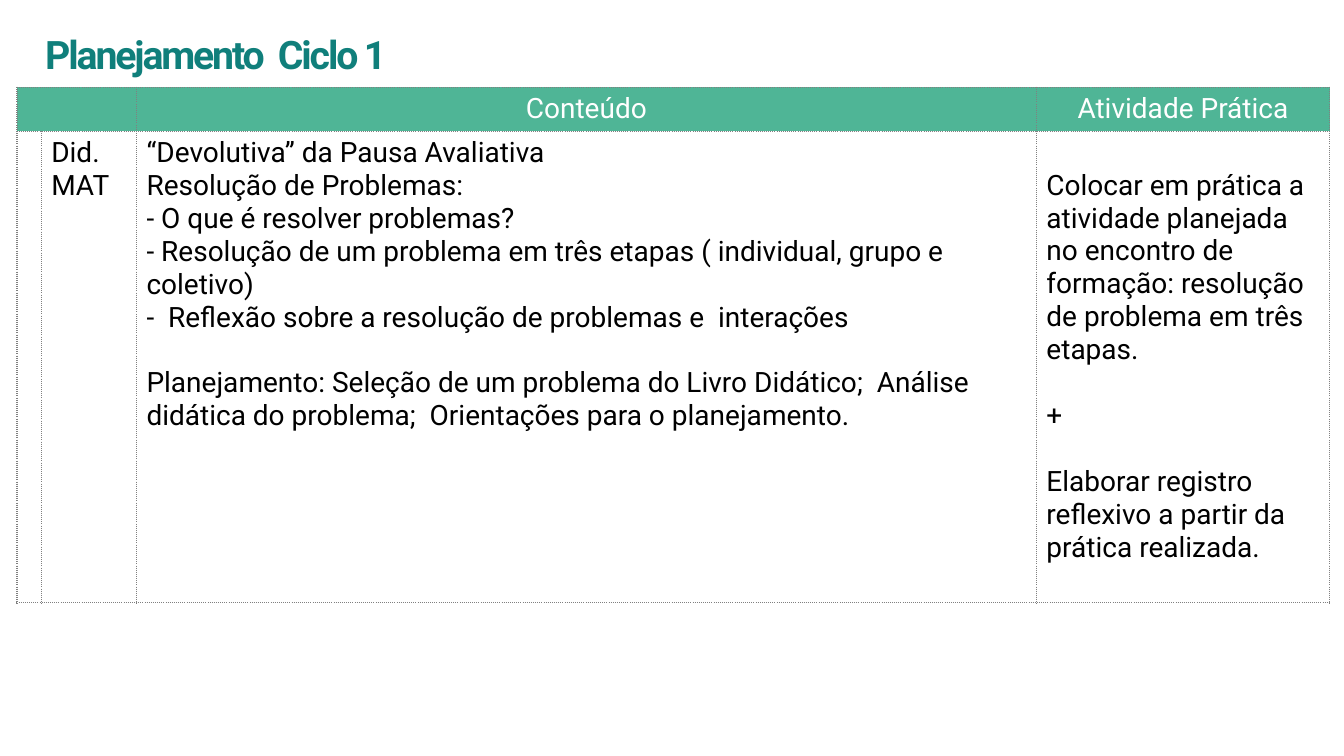
import pptx
import pptx.util
import pptx.dml.color
import pptx.enum.text
import pptx.oxml
import pptx.oxml.ns
from pptx.util import Cm

TEAL = pptx.dml.color.RGBColor(0x10, 0x7F, 0x7B)
GREEN = pptx.dml.color.RGBColor(0x4F, 0xB5, 0x96)
WHITE = pptx.dml.color.RGBColor(0xFF, 0xFF, 0xFF)
BLACK = pptx.dml.color.RGBColor(0x00, 0x00, 0x00)
GREY = pptx.dml.color.RGBColor(0x80, 0x80, 0x80)
FONT = "Roboto"
LINE_HEIGHT = pptx.util.Pt(23.44)  # one line of 20 pt text


def set_borders(cell):
    properties = cell._tc.get_or_add_tcPr()
    for side in ("lnL", "lnR", "lnT", "lnB"):
        properties.append(pptx.oxml.parse_xml(
            f'<a:{side} {pptx.oxml.ns.nsdecls("a")} w="12700">'
            f'<a:solidFill><a:srgbClr val="{GREY}"/></a:solidFill>'
            f'<a:prstDash val="sysDot"/></a:{side}>'))


def style_font(para, size, color):
    para.font.name = FONT
    para.font.size = pptx.util.Pt(size)
    para.font.color.rgb = color


deck = pptx.Presentation()
deck.slide_width = Cm(33.87)
deck.slide_height = Cm(19.05)
page = deck.slides.add_slide(deck.slide_layouts[6])

# Title
box = page.shapes.add_textbox(Cm(0.89), Cm(0.64), Cm(31.06), Cm(3.18))
box.text_frame.word_wrap = True
para = box.text_frame.paragraphs[0]
span = para.add_run()
span.text = "Planejamento  Ciclo 1"
span._r.get_or_add_rPr().set("spc", "-150")
style_font(para, 28, TEAL)
para.font.bold = True

# Table contents: each cell is a list of (text, blank lines above)
header = [[], [], [("Conteúdo", 0)], [("Atividade Prática", 0)]]
plan = [
    [],
    [("Did.", 0), ("MAT", 0)],
    [("“Devolutiva” da Pausa Avaliativa", 0),
     ("Resolução de Problemas:", 0),
     ("- O que é resolver problemas?", 0),
     ("- Resolução de um problema em três etapas ( individual, grupo e coletivo)", 0),
     ("-  Reflexão sobre a resolução de problemas e  interações", 0),
     ("Planejamento: Seleção de um problema do Livro Didático;  Análise "
      "didática do problema;  Orientações para o planejamento.", 1)],
    [("Colocar em prática a atividade planejada no encontro de formação: "
      "resolução de problema em três etapas.", 0),
     ("+", 1),
     ("Elaborar registro reflexivo a partir da prática realizada.", 1)],
]
column_widths = [0.6, 2.4, 22.68, 7.39]
row_heights = [1.11, 11.88]

# Table
table = page.shapes.add_table(
    2, 4, Cm(0.43), Cm(2.2), Cm(sum(column_widths)), Cm(sum(row_heights))).table
table.first_row = False
table.horz_banding = False
for column, width in zip(table.columns, column_widths):
    column.width = Cm(width)
for row, height in zip(table.rows, row_heights):
    row.height = Cm(height)

for row_index, contents in enumerate([header, plan]):
    is_header = row_index == 0
    for column_index, lines in enumerate(contents):
        cell = table.cell(row_index, column_index)
        set_borders(cell)
        if is_header:
            cell.fill.solid()
            cell.fill.fore_color.rgb = GREEN
        else:
            cell.fill.background()
        for line_index, (text, blank_lines) in enumerate(lines):
            frame = cell.text_frame
            para = frame.add_paragraph() if line_index else frame.paragraphs[0]
            para.text = text
            style_font(para, 20, WHITE if is_header else BLACK)
            if is_header:
                para.alignment = pptx.enum.text.PP_ALIGN.CENTER
            if blank_lines:
                para.space_before = blank_lines * LINE_HEIGHT

table.cell(0, 0).merge(table.cell(0, 1))
# The activity starts one line lower than its neighbours
table.cell(1, 3).margin_top = Cm(0.95)

deck.save("out.pptx")
